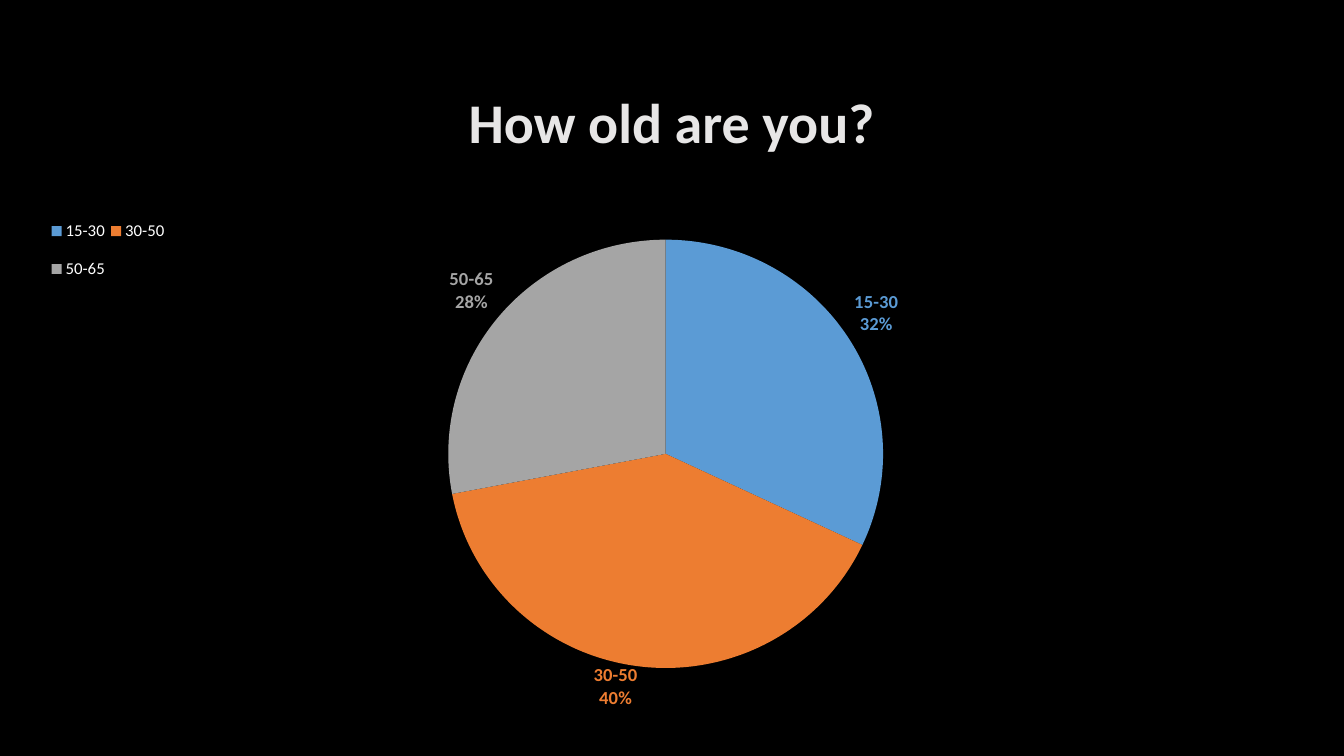
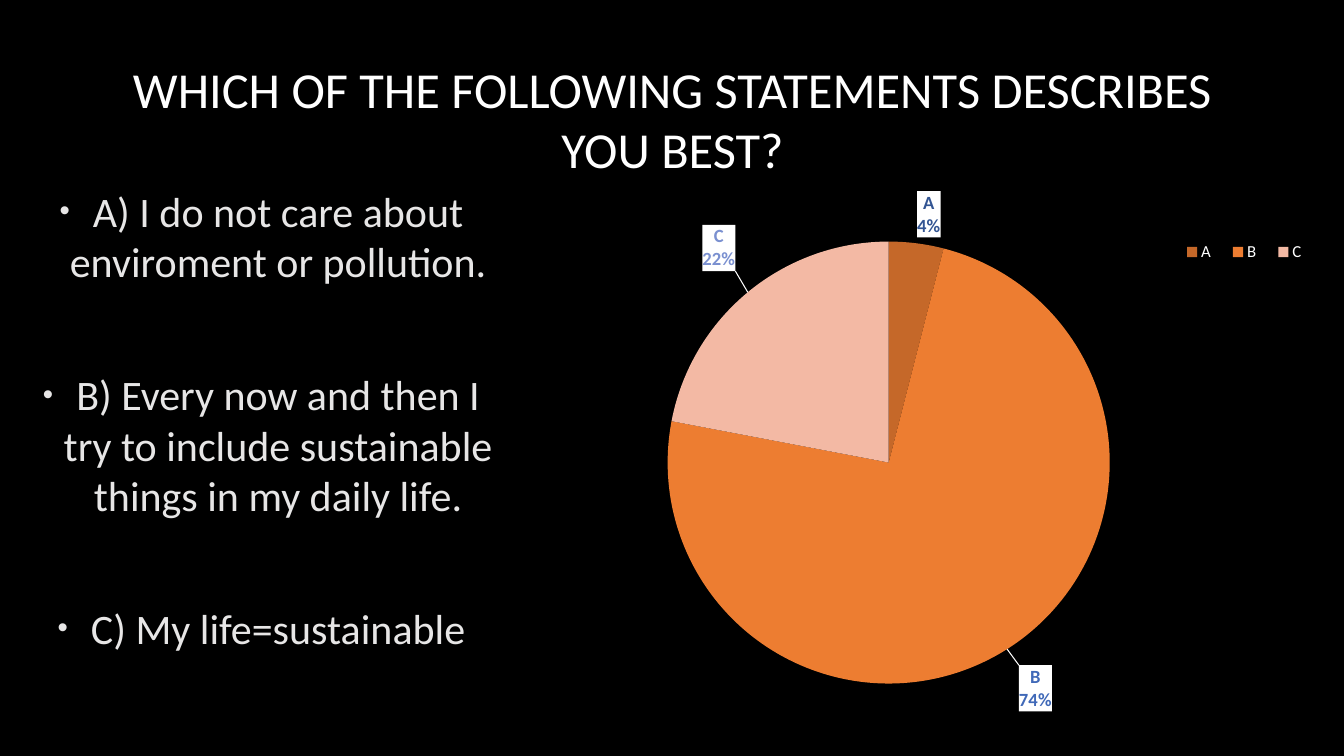
"""Build two survey result slides with pie charts."""
from dataclasses import dataclass

from lxml import etree
from pptx import Presentation
from pptx.chart.data import CategoryChartData
from pptx.dml.color import RGBColor
from pptx.enum.chart import XL_CHART_TYPE, XL_LEGEND_POSITION
from pptx.enum.text import MSO_ANCHOR, PP_ALIGN
from pptx.oxml import parse_xml
from pptx.oxml.ns import nsdecls, qn
from pptx.slide import Slide
from pptx.text.text import Font
from pptx.util import Inches, Pt

PIE = XL_CHART_TYPE.PIE
LEGEND_RIGHT = XL_LEGEND_POSITION.RIGHT
CENTER = PP_ALIGN.CENTER
MIDDLE = MSO_ANCHOR.MIDDLE
BLANK_LAYOUT = 6

Box = tuple[float, float, float, float]


@dataclass(frozen=True)
class Theme:
    font: str = "Calibri"
    background: str = "000000"
    white: str = "FFFFFF"
    soft: str = "E7E6E6"
    question: float = 40
    statement_question: float = 36
    answer: float = 30
    answer_gap: float = 59
    legend: float = 12
    label: float = 13.3
    chart: float = 10


@dataclass(frozen=True)
class Slice:
    category: str
    percent: int
    color: str
    label_color: str
    label_shift: tuple[float, float] | None = None


@dataclass(frozen=True)
class Pie:
    box: Box
    plot: Box
    legend: Box
    slices: tuple[Slice, ...]
    label_fill: str | None = None


@dataclass(frozen=True)
class Question:
    text: str
    box: Box
    size: float
    color: str
    bold: bool
    pie: Pie
    answers: tuple[str, ...] = ()


THEME = Theme()
ANSWERS_BOX: Box = (0, 1.79, 5.14, 4.9)

QUESTIONS = (
    Question(
        "How old are you?", (1, 0.67, 11.32, 1.06), THEME.question, THEME.soft, True,
        Pie(
            box=(0.45, 1.86, 12.43, 5.26),
            plot=(0.07, 0.1, 0.85, 0.82),
            legend=(0, 0.03, 0.1, 0.18),
            slices=(
                Slice("15-30", 32, "5B9BD5", "5B9BD5"),
                Slice("30-50", 40, "ED7D31", "ED7D31"),
                Slice("50-65", 28, "A5A5A5", "A5A5A5"),
            ),
        ),
    ),
    Question(
        "WHICH OF THE FOLLOWING STATEMENTS DESCRIBES YOU BEST?",
        (1.01, 0.63, 11.32, 1.09), THEME.statement_question, THEME.white, False,
        Pie(
            box=(4.73, 1.73, 8.6, 5.5),
            plot=(0.22, 0.12, 0.51, 0.8),
            legend=(0.8, 0.11, 0.17, 0.06),
            slices=(
                Slice("A", 4, "C56829", "335593"),
                Slice("B", 74, "ED7D31", "4069B8", (0.01, 0.02)),
                Slice("C", 22, "F3B9A4", "7A90D0", (-0.01, -0.03)),
            ),
            label_fill=THEME.white,
        ),
        (
            "A) I do not care about enviroment or pollution.",
            "B) Every now and then I try to include sustainable things in my daily life.",
            "C) My life=sustainable",
        ),
    ),
)


def style_font(font: Font, size: float, color: str, bold: bool = False) -> None:
    for attribute, value in {"name": THEME.font, "size": Pt(size), "bold": bold}.items():
        setattr(font, attribute, value)
    font.color.rgb = RGBColor.from_string(color)


def add_lines(slide: Slide, box: Box, lines: tuple[str, ...], size: float,
              color: str, bold: bool = False, bulleted: bool = False) -> None:
    frame = slide.shapes.add_textbox(*map(Inches, box)).text_frame
    frame.word_wrap = True
    if not bulleted:
        frame.vertical_anchor = MIDDLE
    for index, line in enumerate(lines):
        paragraph = frame.add_paragraph() if index else frame.paragraphs[0]
        paragraph.alignment = CENTER
        run = paragraph.add_run()
        run.text = line
        style_font(run.font, size, color, bold)
        if bulleted:
            paragraph.space_after = Pt(THEME.answer_gap)
            properties = paragraph._p.get_or_add_pPr()
            properties.set("marL", str(Inches(0.38)))
            properties.set("indent", str(Inches(-0.33)))
            bullet_color = etree.SubElement(properties, qn("a:buClr"))
            etree.SubElement(bullet_color, qn("a:srgbClr"), val=color)
            etree.SubElement(properties, qn("a:buSzPct"), val="70000")
            etree.SubElement(properties, qn("a:buFont"), typeface="Arial")
            etree.SubElement(properties, qn("a:buChar"), char="•")


def manual_layout(area: Box, inner: bool = False) -> etree.ElementBase:
    target = '<c:layoutTarget val="inner"/>' if inner else ""
    modes = '<c:xMode val="edge"/><c:yMode val="edge"/>'
    sizes = "".join(f'<c:{key} val="{value}"/>' for key, value in zip("xywh", area))
    return parse_xml(f'<c:layout {nsdecls("c")}><c:manualLayout>{target}{modes}{sizes}'
                     "</c:manualLayout></c:layout>")


def drop_layout(parent: etree.ElementBase) -> None:
    for layout in parent.findall(qn("c:layout")):
        parent.remove(layout)


def slice_labels(pie: Pie) -> etree.ElementBase:
    flags = {"LegendKey": 0, "Val": 0, "CatName": 1, "SerName": 0,
             "Percent": 1, "BubbleSize": 0}
    shown = '<c:dLblPos val="outEnd"/>' + "".join(
        f'<c:show{flag} val="{value}"/>' for flag, value in flags.items()
    ) + "<c:separator>\n</c:separator>"
    fill = (f'<a:solidFill><a:srgbClr val="{pie.label_fill}"/></a:solidFill>'
            if pie.label_fill else "<a:noFill/>")
    labels = ""
    for index, part in enumerate(pie.slices):
        shift = ""
        if part.label_shift:
            x, y = part.label_shift
            shift = (f'<c:layout><c:manualLayout><c:x val="{x}"/><c:y val="{y}"/>'
                     "</c:manualLayout></c:layout>")
        labels += (
            f'<c:dLbl><c:idx val="{index}"/>{shift}'
            f"<c:spPr>{fill}<a:ln><a:noFill/></a:ln></c:spPr>"
            f'<c:txPr><a:bodyPr/><a:p><a:pPr><a:defRPr sz="{round(THEME.label * 100)}" b="1">'
            f'<a:solidFill><a:srgbClr val="{part.label_color}"/></a:solidFill>'
            f'<a:latin typeface="{THEME.font}"/></a:defRPr></a:pPr>'
            f'<a:endParaRPr lang="en-US"/></a:p></c:txPr>{shown}</c:dLbl>'
        )
    leader = (f'<c:showLeaderLines val="1"/><c:leaderLines><c:spPr><a:ln w="{Pt(0.75)}">'
              f'<a:solidFill><a:srgbClr val="{THEME.white}"/></a:solidFill>'
              "</a:ln></c:spPr></c:leaderLines>")
    return parse_xml(f'<c:dLbls {nsdecls("c", "a")}>{labels}{shown}{leader}</c:dLbls>')


def add_pie(slide: Slide, pie: Pie) -> None:
    data = CategoryChartData()
    data.categories = [part.category for part in pie.slices]
    data.add_series("Series 1", [part.percent for part in pie.slices])
    chart = slide.shapes.add_chart(PIE, *map(Inches, pie.box), data).chart
    chart.has_title = False
    style_font(chart.font, THEME.chart, THEME.white)

    chart.has_legend = True
    legend = chart.legend
    legend.position = LEGEND_RIGHT
    legend.include_in_layout = False
    style_font(legend.font, THEME.legend, THEME.white)
    chart_xml = chart.element
    legend_xml = chart_xml.find(".//" + qn("c:legend"))
    drop_layout(legend_xml)
    legend_xml.find(qn("c:legendPos")).addnext(manual_layout(pie.legend))

    plot_area = chart_xml.find(".//" + qn("c:plotArea"))
    drop_layout(plot_area)
    plot_area.insert(0, manual_layout(pie.plot, inner=True))

    plot = chart.plots[0]
    plot.vary_by_categories = True
    series = plot.series[0]
    for index, part in enumerate(pie.slices):
        slice_format = series.points[index].format
        slice_format.fill.solid()
        slice_format.fill.fore_color.rgb = RGBColor.from_string(part.color)
        slice_format.line.fill.background()
    series_xml = plot_area.find(".//" + qn("c:ser"))
    series_xml.find(qn("c:cat")).addprevious(slice_labels(pie))


def main() -> None:
    deck = Presentation()
    deck.slide_width, deck.slide_height = Inches(13.33), Inches(7.5)
    backdrop = deck.slide_master.background.fill
    backdrop.solid()
    backdrop.fore_color.rgb = RGBColor.from_string(THEME.background)
    for question in QUESTIONS:
        slide = deck.slides.add_slide(deck.slide_layouts[BLANK_LAYOUT])
        add_lines(slide, question.box, (question.text,), question.size,
                  question.color, question.bold)
        if question.answers:
            add_lines(slide, ANSWERS_BOX, question.answers, THEME.answer,
                      THEME.soft, bulleted=True)
        add_pie(slide, question.pie)
    deck.save("out.pptx")


if __name__ == "__main__":
    main()
